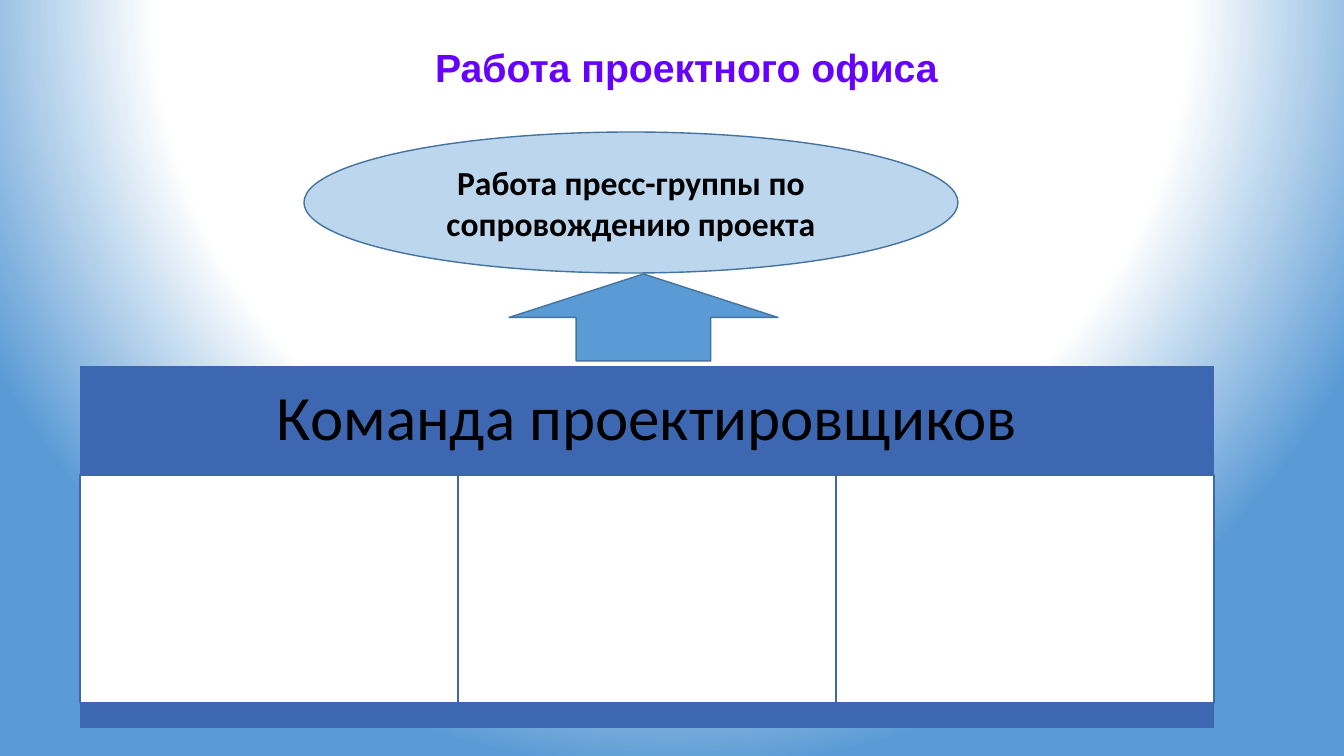
from lxml import etree
from pptx import Presentation
from pptx.dml.color import RGBColor
from pptx.enum.shapes import MSO_SHAPE
from pptx.enum.text import MSO_ANCHOR, MSO_AUTO_SIZE, PP_ALIGN
from pptx.oxml import parse_xml
from pptx.util import Emu, Pt

TITLE = "Работа проектного офиса"
PRESS_GROUP = "Работа пресс-группы по сопровождению проекта"
TEAM = "Команда проектировщиков"
COLUMN_COUNT = 3

COLORS = {
    "title": "6600FF",
    "text": "000000",
    "band": "3E67B2",
    "white": "FFFFFF",
    "blue": "5B9BD5",
    "outline": "43739E",
    "pale": "BCD6EE",
}

# Lengths in px: left, top, width, height
TITLE_BOX = (425, 40, 532, 59)
ELLIPSE_BOX = (304, 132, 654, 141)
ARROW_BOX = (509, 274, 269, 87)
TEAM_LEFT, TEAM_TOP, TEAM_WIDTH = 80, 366, 1134
HEADER_HEIGHT, COLUMN_HEIGHT, FOOTER_HEIGHT = 109, 228, 25
HEADER_INSET = 19

GRADIENT = """
<a:gradFill xmlns:a="http://schemas.openxmlformats.org/drawingml/2006/main" rotWithShape="1">
  <a:gsLst>
    <a:gs pos="0"><a:srgbClr val="{white}"/></a:gs>
    <a:gs pos="67000"><a:srgbClr val="{white}"/></a:gs>
    <a:gs pos="100000"><a:srgbClr val="{blue}"/></a:gs>
  </a:gsLst>
  <a:path path="circle">
    <a:fillToRect l="50000" t="-80000" r="50000" b="180000"/>
  </a:path>
</a:gradFill>"""


def px(length):
    return Emu(round(length * 914400 / 100.8))


def color(name):
    return RGBColor.from_string(COLORS[name])


def set_gradient_background(slide):
    slide.background.fill.solid()
    properties = slide.element.xpath("p:cSld/p:bg/p:bgPr")[0]
    properties.replace(properties[0], parse_xml(etree.tostring(
        etree.fromstring(GRADIENT.format(**COLORS)))))


def add_block(slide, kind, box, fill, line=None):
    block = slide.shapes.add_shape(kind, *map(px, box))
    block.shadow.inherit = False
    block.fill.solid()
    block.fill.fore_color.rgb = color(fill)
    if line:
        block.line.color.rgb = color(line)
        block.line.width = Pt(1)
    else:
        block.line.fill.background()
    return block


def write(shape, text, font_name, size, font_color, bold, align):
    frame = shape.text_frame
    frame.text = text
    frame.word_wrap = True
    frame.auto_size = MSO_AUTO_SIZE.NONE
    frame.vertical_anchor = MSO_ANCHOR.MIDDLE
    paragraph = frame.paragraphs[0]
    paragraph.alignment = align
    paragraph.font.name = font_name
    paragraph.font.size = Pt(size)
    paragraph.font.bold = bold
    paragraph.font.color.rgb = color(font_color)
    return paragraph


def add_team(slide):
    header = add_block(slide, MSO_SHAPE.RECTANGLE,
                       (TEAM_LEFT, TEAM_TOP, TEAM_WIDTH, HEADER_HEIGHT), "band")
    write(header, TEAM, "Calibri", 45, "text", False, PP_ALIGN.CENTER).line_spacing = 0.9
    frame = header.text_frame
    frame.margin_left = frame.margin_right = px(HEADER_INSET)
    frame.margin_top = frame.margin_bottom = px(HEADER_INSET)

    column_top = TEAM_TOP + HEADER_HEIGHT
    column_width = TEAM_WIDTH // COLUMN_COUNT
    for index in range(COLUMN_COUNT):
        add_block(slide, MSO_SHAPE.RECTANGLE,
                  (TEAM_LEFT + index * column_width, column_top, column_width, COLUMN_HEIGHT),
                  "white", "band")
    add_block(slide, MSO_SHAPE.RECTANGLE,
              (TEAM_LEFT, column_top + COLUMN_HEIGHT, TEAM_WIDTH, FOOTER_HEIGHT), "band")


def main():
    presentation = Presentation()
    presentation.slide_width, presentation.slide_height = px(1344), px(756)
    slide = presentation.slides.add_slide(presentation.slide_layouts.get_by_name("Title Only"))
    set_gradient_background(slide)

    title = slide.shapes.title
    title.left, title.top, title.width, title.height = map(px, TITLE_BOX)
    write(title, TITLE, "Arial", 28, "title", True, PP_ALIGN.LEFT).line_spacing = 0.9

    add_team(slide)
    add_block(slide, MSO_SHAPE.UP_ARROW, ARROW_BOX, "blue", "outline")
    press_group = add_block(slide, MSO_SHAPE.OVAL, ELLIPSE_BOX, "pale", "outline")
    write(press_group, PRESS_GROUP, "Calibri", 24, "text", True, PP_ALIGN.CENTER)

    presentation.save("out.pptx")


if __name__ == "__main__":
    main()
